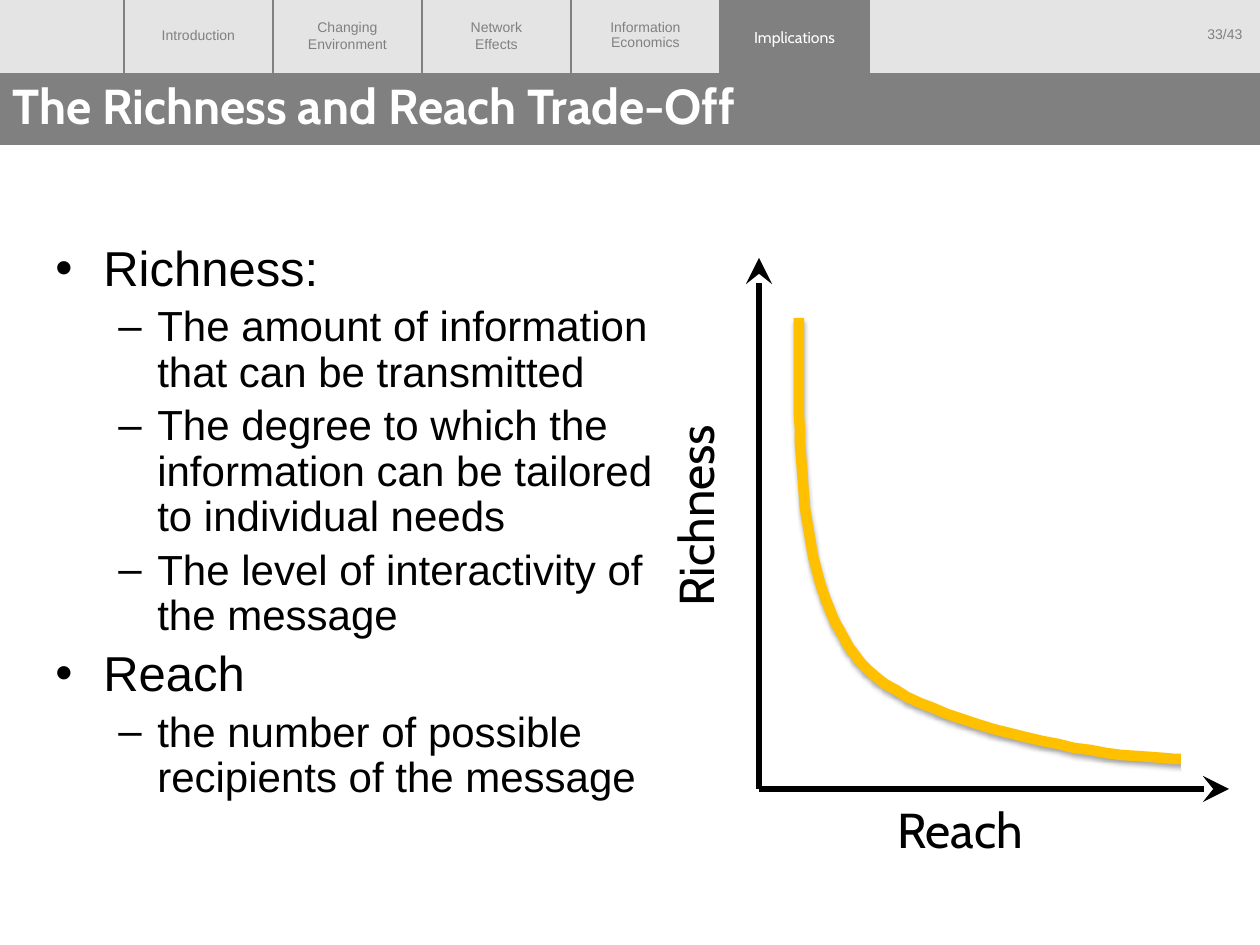
"""Build the slide on the trade-off between richness and reach."""
import pptx
import pptx.dml.color
import pptx.enum.shapes
import pptx.enum.text
import pptx.oxml
import pptx.oxml.ns
import pptx.util
from lxml import etree

PX = 914400 / 126
INK = {"pale": "E4E4E4", "gray": "808080", "white": "FFFFFF",
       "black": "000000", "gold": "FFC000"}
RGB = {name: pptx.dml.color.RGBColor.from_string(code) for name, code in INK.items()}
Pt = pptx.util.Pt
Align = pptx.enum.text.PP_ALIGN
Anchor = pptx.enum.text.MSO_ANCHOR
Shape = pptx.enum.shapes.MSO_SHAPE
qn = pptx.oxml.ns.qn

deck = pptx.Presentation()
deck.slide_width, deck.slide_height = round(1260 * PX), round(945 * PX)
slide = deck.slides.add_slide(deck.slide_layouts[6])
shapes = slide.shapes


def write(shape, text, size, face, ink, align=Align.LEFT, space=None, wrap=True):
    frame = shape.text_frame
    frame.word_wrap = wrap
    frame.text = text
    for para in frame.paragraphs:
        para.alignment = align
        para.line_spacing = space
        for run in para.runs:
            run.font.size = Pt(size)
            run.font.name = face
            run.font.color.rgb = RGB[ink]
    return frame


def draw(start, end, ink, width):
    ends = [round(v * PX) for v in (*start, *end)]
    line = shapes.add_connector(pptx.enum.shapes.MSO_CONNECTOR.STRAIGHT, *ends)
    line.line.color.rgb = RGB[ink]
    line.line.width = Pt(width)
    etree.SubElement(line._element.spPr, qn("a:effectLst"))
    return line


bars = {}
for name, box, ink in [("header", (0, 0, 1260, 73), "pale"),
                       ("title", (0, 73, 1260, 72), "gray")]:
    bar = shapes.add_shape(Shape.RECTANGLE, *[round(v * PX) for v in box])
    bar.shadow.inherit = False
    bar.fill.solid()
    bar.fill.fore_color.rgb = RGB[ink]
    bar.line.fill.background()
    bars[name] = bar

tabs = [124 + 149 * i for i in range(6)]
for x in tabs:
    draw((x, 0), (x, 73), "gray", 0.75)

labels = [("Introduction", 0.9), ("Changing\nEnvironment", 1.0),
          ("Network\nEffects", 1.0), ("Information\nEconomics", 0.9)]
for x, (text, space) in zip(tabs, labels):
    box = shapes.add_textbox(*[round(v * PX) for v in (x, 12, 149, 47)])
    frame = write(box, text, 8, "Arial", "gray", Align.CENTER, space)
    frame.vertical_anchor = Anchor.MIDDLE

page = shapes.add_textbox(*[round(v * PX) for v in (1184, 19, 71, 30)])
write(page, "33/43", 8, "Arial", "gray", Align.RIGHT, wrap=False)

frame = write(bars["title"], "The Richness and Reach Trade-Off", 28, "Cabin", "white", space=0.85)
frame.vertical_anchor = Anchor.MIDDLE
frame.paragraphs[0].runs[0].font.bold = True

points = [
    (0, "Richness:"),
    (1, "The amount of information that can be transmitted"),
    (1, "The degree to which the information can be tailored to individual needs"),
    (1, "The level of interactivity of the message"),
    (0, "Reach"),
    (1, "the number of possible recipients of the message"),
]
levels = [("•", 48, 48, 28), ("–", 102, 39, 24)]
body = shapes.add_textbox(*[round(v * PX) for v in (43, 238, 630, 620)])
frame = write(body, "\n".join(text for _, text in points), 28, "Arial", "black", space=0.9)
for i, (para, (level, _)) in enumerate(zip(frame.paragraphs, points)):
    mark, left, hang, size = levels[level]
    para.level = level
    props = para._p.get_or_add_pPr()
    props.set("marL", str(round(left * PX)))
    props.set("indent", str(round(-hang * PX)))
    para.space_before = Pt(size * 0.2 if i else 0)
    etree.SubElement(props, qn("a:buFont")).set("typeface", "Arial")
    etree.SubElement(props, qn("a:buChar")).set("char", mark)
    para.runs[0].font.size = Pt(size)

for text, box, turn in [("Richness", (588, 475, 215, 72), 270),
                        ("Reach", (885, 793, 158, 72), 0)]:
    name = shapes.add_textbox(*[round(v * PX) for v in box])
    name.rotation = turn
    write(name, text, 28, "Cabin", "black", wrap=False)

for tip in [(759, 258), (1229, 789)]:
    axis = draw((759, 789), tip, "black", 3)
    head = etree.SubElement(axis.line._get_or_add_ln(), qn("a:tailEnd"))
    for key, value in [("type", "stealth"), ("w", "lg"), ("len", "lg")]:
        head.set(key, value)

bends = [[(799, 318), (798, 459), (798, 599), (868, 670)],
         [(868, 670), (940, 741), (1226, 780), (1228, 747)]]
path = []
for bend in bends:
    for step in range(1, 31):
        t = step / 30
        parts = [(1 - t) ** 3, 3 * t * (1 - t) ** 2, 3 * t * t * (1 - t), t ** 3]
        path.append([sum(w * p[k] for w, p in zip(parts, bend)) for k in (0, 1)])
build = shapes.build_freeform(*bends[0][0], scale=PX)
build.add_line_segments(path, close=False)
curve = build.convert_to_shape()
curve.fill.background()
curve.line.color.rgb = RGB["gold"]
curve.line.width = Pt(6)
curve._element.spPr.append(pptx.oxml.parse_xml(
    f'<a:effectLst {pptx.oxml.ns.nsdecls("a")}>'
    f'<a:outerShdw blurRad="{Pt(3.1)}" dist="{Pt(1.8)}" dir="5400000" rotWithShape="0">'
    f'<a:srgbClr val="{INK["black"]}"><a:alpha val="35000"/></a:srgbClr>'
    '</a:outerShdw></a:effectLst>'))

for box, ink, edge in [((1186, 714, 50, 54), "white", 6),
                       ((tabs[4], 0, 149, 75), "gray", 0)]:
    cover = shapes.add_shape(Shape.RECTANGLE, *[round(v * PX) for v in box])
    cover.shadow.inherit = False
    cover.fill.solid()
    cover.fill.fore_color.rgb = RGB[ink]
    if edge:
        cover.line.color.rgb = RGB[ink]
        cover.line.width = Pt(edge)
    else:
        cover.line.fill.background()
frame = write(cover, "Implications", 9, "Cabin", "white", Align.CENTER, wrap=False)
frame.vertical_anchor = Anchor.MIDDLE

deck.save("out.pptx")
